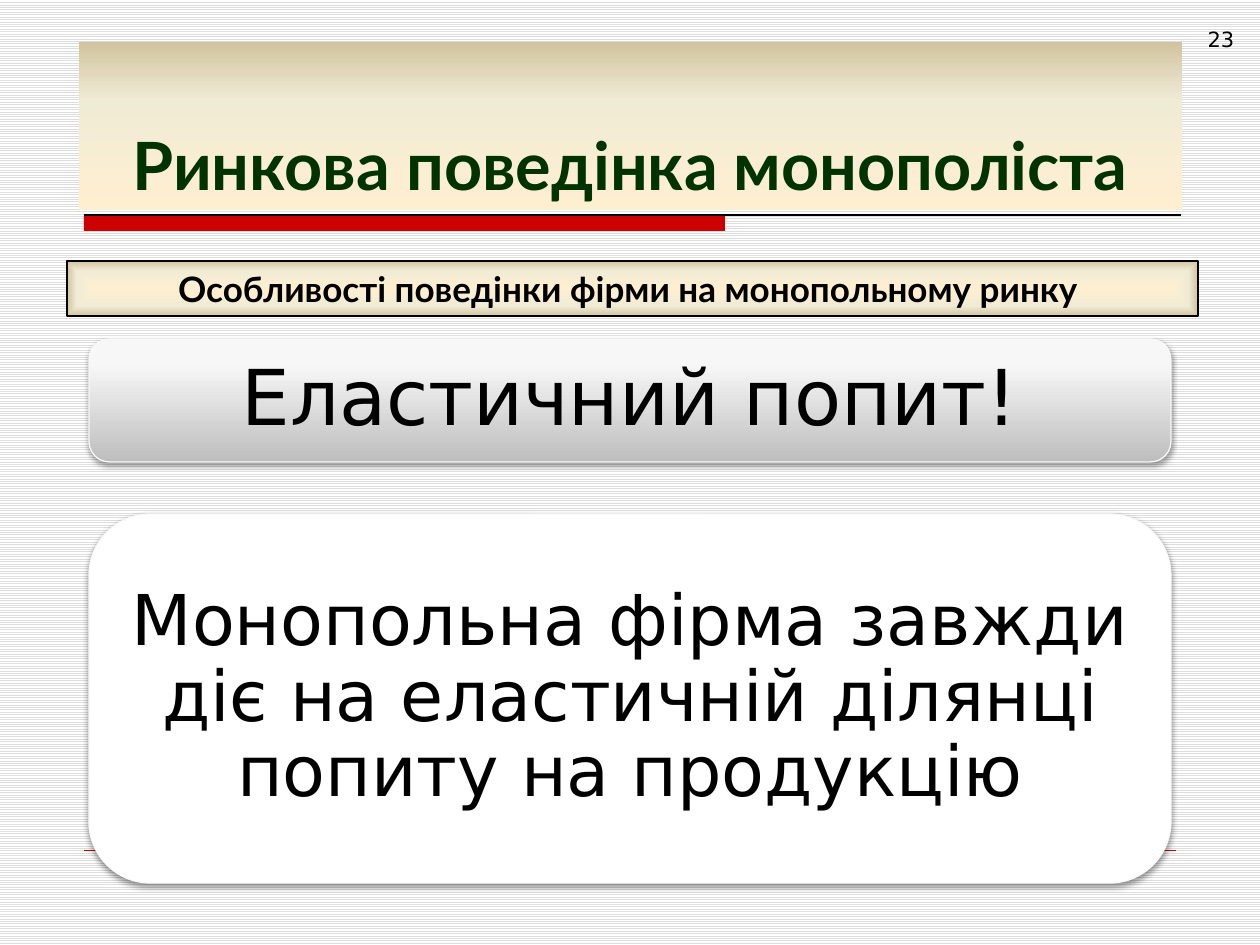
from dataclasses import dataclass

from lxml.etree import SubElement
from pptx import Presentation
from pptx.dml.color import RGBColor
from pptx.enum.dml import MSO_PATTERN
from pptx.enum.shapes import MSO_CONNECTOR, MSO_SHAPE
from pptx.enum.text import MSO_ANCHOR, PP_ALIGN
from pptx.oxml.ns import qn
from pptx.util import Emu, Pt

PX = 914400 / 126


@dataclass(frozen=True)
class Theme:
    stripe: str = "DDDDDD"
    paper: str = "FFFFFF"
    red: str = "CC0000"
    ink: str = "000000"
    heading: str = "003300"
    card_edge: str = "F9F9F9"
    sand: tuple = ((0, "FFEFD1"), (65, "F0EBD5"), (100, "D1C39F"))
    silver: tuple = ((0, "BEBEBE"), (80, "F7F7F7"), (100, "F8F8F8"))
    heading_font: str = "Lato"
    body_font: str = "DejaVu Sans"
    number_size: int = 12
    title_size: int = 38
    subtitle_size: int = 20
    lead_size: int = 44
    body_size: int = 40


theme = Theme()


def fill_gradient(shape, stops, from_center=False):
    """Blend the stops from bottom to top, or from the centre outwards."""
    shape.fill.gradient()
    gradient = shape._element.spPr.find(qn("a:gradFill"))
    for child in list(gradient):
        gradient.remove(child)
    stop_list = SubElement(gradient, qn("a:gsLst"))
    for position, color in stops:
        stop = SubElement(stop_list, qn("a:gs"), pos=str(position * 1000))
        SubElement(stop, qn("a:srgbClr"), val=color)
    if from_center:
        focus = SubElement(gradient, qn("a:path"), path="rect")
        SubElement(focus, qn("a:fillToRect"), l="50000", t="50000", r="50000", b="50000")
    else:
        SubElement(gradient, qn("a:lin"), ang="16200000", scaled="0")


def write_text(shape, text, font, size, color, bold=False, anchor=MSO_ANCHOR.MIDDLE):
    frame = shape.text_frame
    frame.word_wrap = True
    frame.vertical_anchor = anchor
    para = frame.paragraphs[0]
    para.text = text
    para.alignment = PP_ALIGN.CENTER
    para.font.name = font
    para.font.size = Pt(size)
    para.font.bold = bold
    para.font.color.rgb = RGBColor.from_string(color)
    return frame, para


deck = Presentation()
deck.slide_width, deck.slide_height = Emu(round(1260 * PX)), Emu(round(945 * PX))
page = deck.slides.add_slide(deck.slide_layouts[6])
backdrop = page.background.fill
backdrop.patterned()
backdrop.pattern = MSO_PATTERN.LIGHT_HORIZONTAL
backdrop.fore_color.rgb = RGBColor.from_string(theme.stripe)
backdrop.back_color.rgb = RGBColor.from_string(theme.paper)

# Accent bar and rules
bar = page.shapes.add_shape(
    MSO_SHAPE.RECTANGLE, *(Emu(round(v * PX)) for v in (84, 215, 641, 16)))
bar.shadow.inherit = False
bar.fill.solid()
bar.fill.fore_color.rgb = RGBColor.from_string(theme.red)
bar.line.fill.background()
for right, y, color, weight in ((1181, 215, theme.ink, 0.75), (1176, 850, theme.red, 0.25)):
    rule = page.shapes.add_connector(
        MSO_CONNECTOR.STRAIGHT, *(Emu(round(v * PX)) for v in (84, y, right, y)))
    rule.line.color.rgb = RGBColor.from_string(color)
    rule.line.width = Pt(weight)
    SubElement(rule._element.spPr, qn("a:effectLst"))

# Slide number
number = page.shapes.add_textbox(*(Emu(round(v * PX)) for v in (1182, 20, 78, 34)))
write_text(number, "23", theme.body_font, theme.number_size, theme.ink, anchor=MSO_ANCHOR.TOP)

# Title and subtitle
title = page.shapes.add_shape(
    MSO_SHAPE.RECTANGLE, *(Emu(round(v * PX)) for v in (79, 42, 1103, 168)))
title.shadow.inherit = False
title.line.fill.background()
fill_gradient(title, theme.sand)
write_text(title, "Ринкова поведінка монополіста", theme.heading_font,
           theme.title_size, theme.heading, bold=True, anchor=MSO_ANCHOR.BOTTOM)

subtitle = page.shapes.add_shape(
    MSO_SHAPE.RECTANGLE, *(Emu(round(v * PX)) for v in (67, 261, 1131, 55)))
subtitle.shadow.inherit = False
subtitle.line.color.rgb = RGBColor.from_string(theme.ink)
subtitle.line.width = Pt(1)
fill_gradient(subtitle, theme.sand, from_center=True)
write_text(subtitle, "Особливості поведінки фірми на монопольному ринку ", theme.heading_font,
           theme.subtitle_size, theme.ink, bold=True, anchor=MSO_ANCHOR.TOP)

# Cards: top, height, gradient, inset, size, shadow opacity, text
cards = (
    (339, 123, theme.silver, 22, theme.lead_size, 35, "Еластичний попит!"),
    (514, 369, None, 21, theme.body_size, 38,
     "Монопольна фірма завжди діє на еластичній ділянці попиту на продукцію"),
)
for top, height, stops, inset, size, opacity, text in cards:
    card = page.shapes.add_shape(
        MSO_SHAPE.ROUNDED_RECTANGLE, *(Emu(round(v * PX)) for v in (89, top, 1082, height)))
    if stops:
        fill_gradient(card, stops)
    else:
        card.fill.solid()
        card.fill.fore_color.rgb = RGBColor.from_string(theme.paper)
    card.line.color.rgb = RGBColor.from_string(theme.card_edge)
    card.line.width = Pt(0.75)
    card.shadow.inherit = False
    effects = card._element.spPr.find(qn("a:effectLst"))
    shadow = SubElement(effects, qn("a:outerShdw"), blurRad=str(Pt(3.1)),
                        dist=str(Pt(1.7)), dir="5400000", rotWithShape="0")
    shade = SubElement(shadow, qn("a:srgbClr"), val=theme.ink)
    SubElement(shade, qn("a:alpha"), val=str(opacity * 1000))
    frame, para = write_text(card, text, theme.body_font, size, theme.ink)
    para.line_spacing = 0.9
    frame.margin_left = frame.margin_right = Emu(round(inset * PX))
    frame.margin_top = frame.margin_bottom = Emu(round(inset * PX))

deck.save("out.pptx")
